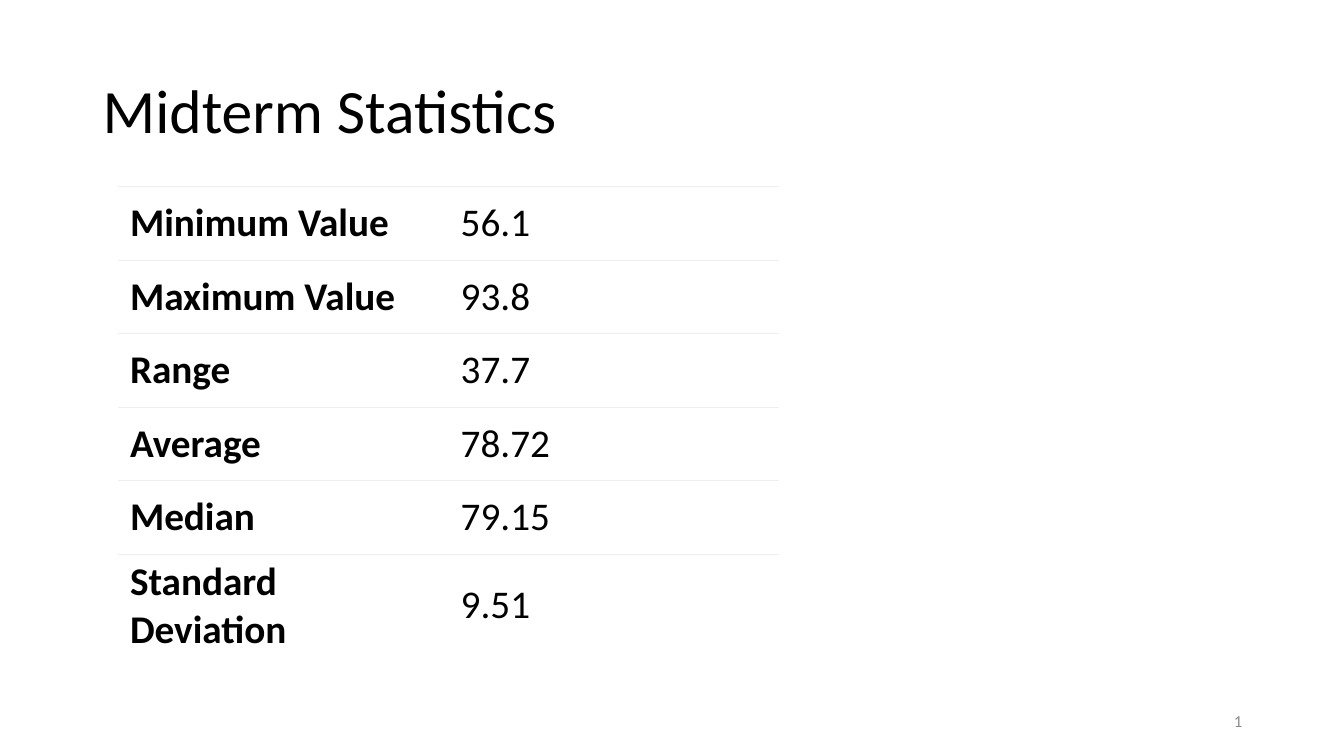
from lxml import etree
from pptx import Presentation
from pptx import util as u
from pptx.dml.color import RGBColor
from pptx.enum import text
from pptx.oxml import ns

PX = 9144  # EMU per px, 100 px to the inch
FONT = "Calibri"
BLACK, WHITE, GREY, RULE = "000000", "FFFFFF", "8C8C8C", "EEEEEE"
STATISTICS = [
    ("Minimum Value", "56.1"),
    ("Maximum Value", "93.8"),
    ("Range", "37.7"),
    ("Average", "78.72"),
    ("Median", "79.15"),
    ("Standard Deviation", "9.51"),
]


def px(n):
    return u.Emu(n * PX)


def color(value):
    return RGBColor.from_string(value)


def add_run(p, words, size, fill, bold=False):
    r = p.add_run()
    r.text = words
    r.font.name = FONT
    r.font.size = u.Pt(size)
    r.font.bold = bold
    r.font.color.rgb = color(fill)


def add_text(s, box, words, size, fill, align=text.PP_ALIGN.LEFT, spacing=1.0):
    tf = s.shapes.add_textbox(*map(px, box)).text_frame
    tf.word_wrap = True
    tf.vertical_anchor = text.MSO_ANCHOR.MIDDLE
    p = tf.paragraphs[0]
    p.alignment = align
    p.line_spacing = spacing
    add_run(p, words, size, fill)


def set_border(cell, side, fill=None):
    """Draw one side of a cell, or clear it when no colour is given."""
    ln = etree.SubElement(cell._tc.get_or_add_tcPr(), ns.qn(f"a:ln{side}"))
    if fill is None:
        etree.SubElement(ln, ns.qn("a:noFill"))
        return
    ln.set("w", str(u.Pt(0.75)))
    solid = etree.SubElement(ln, ns.qn("a:solidFill"))
    etree.SubElement(solid, ns.qn("a:srgbClr"), val=fill)


def fill_cell(cell, words, bold, last):
    cell.vertical_anchor = text.MSO_ANCHOR.MIDDLE
    cell.margin_left = cell.margin_right = px(12)
    cell.margin_top = cell.margin_bottom = px(4)
    add_run(cell.text_frame.paragraphs[0], words, 28, BLACK, bold)
    # Borders come before the fill in the cell properties
    borders = {"L": None, "R": None, "T": RULE, "B": None if last else RULE}
    for side, fill in borders.items():
        set_border(cell, side, fill)
    cell.fill.solid()
    cell.fill.fore_color.rgb = color(WHITE)


def add_statistics(s, left, top, col_width, row_height, rows):
    frame = s.shapes.add_table(len(rows), 2, px(left), px(top),
                               px(2 * col_width), px(len(rows) * row_height))
    table = frame.table
    table.first_row = table.horz_banding = False
    for i, row in enumerate(rows):
        for j, words in enumerate(row):
            fill_cell(table.cell(i, j), words, j == 0, i == len(rows) - 1)


def main():
    prs = Presentation()
    prs.slide_width, prs.slide_height = u.Inches(13.33), u.Inches(7.5)
    s = prs.slides.add_slide(prs.slide_layouts[6])

    # Title
    add_text(s, (92, 40, 1150, 145), "Midterm Statistics", 44, BLACK, spacing=0.9)

    # Table of statistics
    add_statistics(s, 117, 185, 328, 73, STATISTICS)

    # Slide number
    add_text(s, (942, 695, 300, 40), "1", 12, GREY, text.PP_ALIGN.RIGHT)

    prs.save("out.pptx")


if __name__ == "__main__":
    main()
